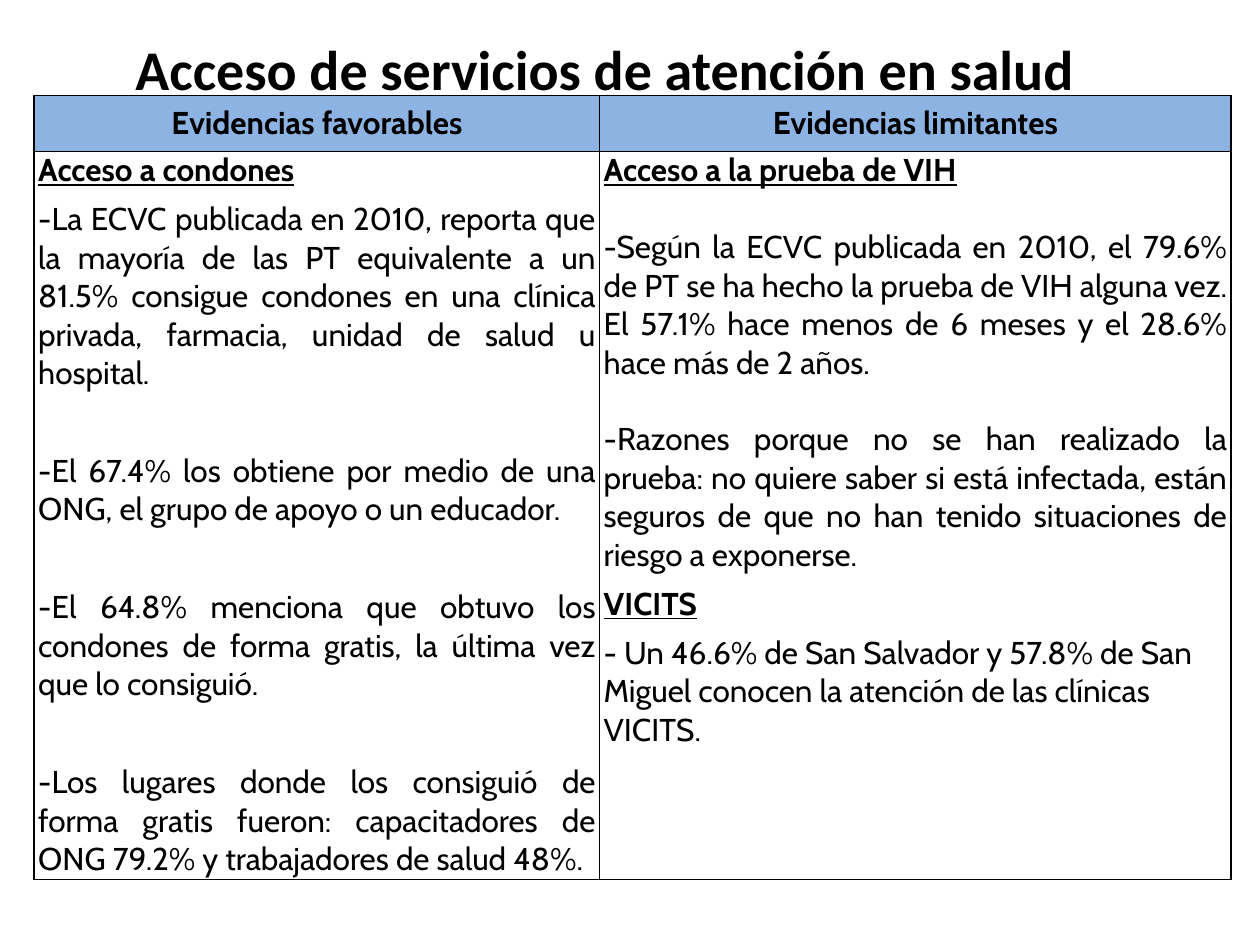
import dataclasses

import lxml.etree
import pptx
import pptx.dml.color
import pptx.enum.text
import pptx.oxml.ns
import pptx.table
import pptx.text.text
import pptx.util

Cm = pptx.util.Cm
Pt = pptx.util.Pt
Align = pptx.enum.text.PP_ALIGN
Anchor = pptx.enum.text.MSO_ANCHOR

BLACK = "000000"
BLUE = "8DB3E2"


@dataclasses.dataclass
class Line:
    text: str
    bold: bool = False
    under: bool = False
    align: Align = Align.JUSTIFY
    before: float = 0
    size: float = 18
    face: str = "Cabin"


@dataclasses.dataclass
class Column:
    width: float
    title: str
    lines: list[Line]


def color(code: str) -> pptx.dml.color.RGBColor:
    return pptx.dml.color.RGBColor.from_string(code)


def write(frame: pptx.text.text.TextFrame, lines: list[Line]) -> None:
    frame.word_wrap = True
    for i, line in enumerate(lines):
        para = frame.add_paragraph() if i else frame.paragraphs[0]
        para.text = line.text
        para.alignment = line.align
        para.space_before = Pt(line.before)
        font = para.font
        font.name = line.face
        font.size = Pt(line.size)
        font.bold = line.bold
        font.underline = line.under
        font.color.rgb = color(BLACK)


def border(cell: pptx.table._Cell) -> None:
    qn = pptx.oxml.ns.qn
    props = cell._tc.get_or_add_tcPr()
    for i, side in enumerate("LRTB"):
        edge = lxml.etree.Element(qn(f"a:ln{side}"), w=str(Pt(1)))
        fill = lxml.etree.SubElement(edge, qn("a:solidFill"))
        lxml.etree.SubElement(fill, qn("a:srgbClr"), val=BLACK)
        props.insert(i, edge)


def draw(cell: pptx.table._Cell, lines: list[Line], head: bool) -> None:
    cell.margin_left = cell.margin_right = Cm(0.08)
    cell.margin_top = cell.margin_bottom = 0
    cell.vertical_anchor = Anchor.MIDDLE if head else Anchor.TOP
    if head:
        cell.fill.solid()
        cell.fill.fore_color.rgb = color(BLUE)
    else:
        cell.fill.background()
    border(cell)
    write(cell.text_frame, lines)


COLUMNS = [
    Column(11.4, "Evidencias favorables", [
        Line("Acceso a condones", True, True, Align.LEFT),
        Line("-La ECVC publicada en 2010, reporta que la mayoría de las PT "
             "equivalente a un 81.5% consigue condones en una clínica privada, "
             "farmacia, unidad de salud u hospital.", before=6),
        Line("-El 67.4% los obtiene por medio de una ONG, el grupo de apoyo "
             "o un educador.", before=34),
        Line("-El 64.8% menciona que obtuvo los condones de forma gratis, la "
             "última vez que lo consiguió.", before=34),
        Line("-Los lugares donde los consiguió de forma gratis fueron: "
             "capacitadores de ONG 79.2% y trabajadores de salud 48%.",
             before=34),
    ]),
    Column(12.73, "Evidencias limitantes", [
        Line("Acceso a la prueba de VIH", True, True),
        Line("-Según la ECVC publicada en 2010, el 79.6% de PT se ha hecho la "
             "prueba de VIH alguna vez. El 57.1% hace menos de 6 meses y el "
             "28.6% hace más de 2 años.", before=22),
        Line("-Razones porque no se han realizado la prueba: no quiere saber "
             "si está infectada, están seguros de que no han tenido "
             "situaciones de riesgo a exponerse.", before=22),
        Line("VICITS", True, True, Align.LEFT, 6),
        Line("- Un 46.6% de San Salvador y 57.8% de San Miguel conocen la "
             "atención de las clínicas VICITS.", align=Align.LEFT, before=6),
    ]),
]
ROWS = [1.12, 14.68]


def main() -> None:
    deck = pptx.Presentation()
    deck.slide_width, deck.slide_height = Cm(25.4), Cm(19.05)
    slide = deck.slides.add_slide(deck.slide_layouts[6])

    wide = sum(col.width for col in COLUMNS)
    grid = slide.shapes.add_table(
        len(ROWS), len(COLUMNS), Cm(0.69), Cm(1.93), Cm(wide), Cm(sum(ROWS))
    ).table
    grid.first_row = grid.horz_banding = False
    for row, height in zip(grid.rows, ROWS):
        row.height = Cm(height)
    for i, col in enumerate(COLUMNS):
        grid.columns[i].width = Cm(col.width)
        title = Line(col.title, True, align=Align.CENTER)
        draw(grid.cell(0, i), [title], True)
        draw(grid.cell(1, i), col.lines, False)

    box = slide.shapes.add_textbox(Cm(0.3), Cm(0.58), Cm(23.8), Cm(1.63))
    write(box.text_frame, [Line("Acceso de servicios de atención en salud",
                                True, align=Align.CENTER, size=32,
                                face="Calibri")])
    deck.save("out.pptx")


if __name__ == "__main__":
    main()
